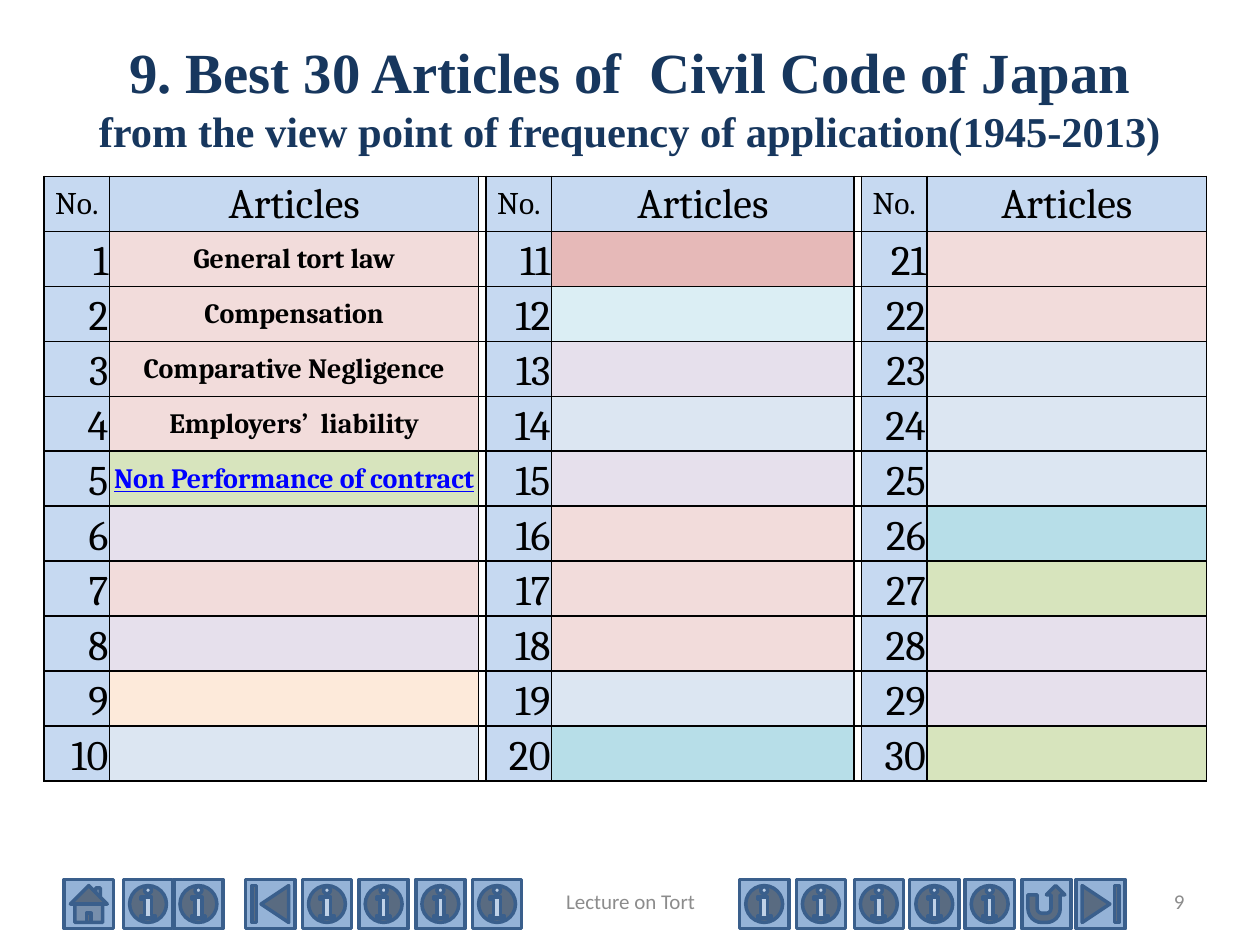
from dataclasses import dataclass

from lxml.etree import SubElement
from pptx import Presentation
from pptx.dml.color import RGBColor
from pptx.enum.shapes import MSO_SHAPE
from pptx.enum.text import MSO_ANCHOR, PP_ALIGN
from pptx.oxml.ns import qn
from pptx.util import Inches, Pt


@dataclass(frozen=True)
class Theme:
    title: str = "17375E"
    ink: str = "000000"
    link: str = "0000FF"
    footer: str = "8C8C8C"
    number: str = "C6D9F1"
    button: str = "95B3D7"
    button_line: str = "3A5F8C"
    title_font: str = "Times New Roman"
    table_font: str = "Cambria"
    footer_font: str = "Calibri"
    title_size: float = 32.4
    subtitle_size: float = 24.3
    large: int = 24
    label: int = 18
    article: int = 16
    small: int = 12


THEME = Theme()

# Fill of each kind of article
FILLS = {
    "rose": "F2DCDB", "deep rose": "E6B9B8", "aqua": "DBEEF4",
    "deep aqua": "B7DEE8", "purple": "E6E0EC", "blue": "DCE6F2",
    "green": "D7E4BD", "orange": "FDEADA",
}
# One list per block of ten articles
ARTICLE_KINDS = [
    ["rose"] * 4 + ["green", "purple", "rose", "purple", "orange", "blue"],
    ["deep rose", "aqua", "purple", "blue", "purple"] + ["rose"] * 3
    + ["blue", "deep aqua"],
    ["rose"] * 2 + ["blue"] * 3
    + ["deep aqua", "green", "purple", "purple", "green"],
]
ARTICLES = ["General tort law", "Compensation", "Comparative Negligence",
            "Employers’  liability", "Non Performance of contract"]
LINKED_ARTICLE = 5

COLUMN_WIDTHS = [0.52, 2.93, 0.05, 0.52, 2.4, 0.05, 0.52, 2.22]
BLOCK_STRIDE = 3
ROW_COUNT = 11
TABLE_HEIGHT = 4.8

BUTTON_TOP, BUTTON_SIZE = 6.98, 0.39
BUTTONS = {
    MSO_SHAPE.ACTION_BUTTON_HOME: [0.51],
    MSO_SHAPE.ACTION_BUTTON_BEGINNING: [1.95],
    MSO_SHAPE.ACTION_BUTTON_INFORMATION: [
        0.98, 1.38, 2.4, 2.85, 3.3, 3.75, 5.87, 6.32, 6.78, 7.22, 7.66],
    MSO_SHAPE.ACTION_BUTTON_RETURN: [8.11],
    MSO_SHAPE.ACTION_BUTTON_END: [8.54],
}


def paint(fill, color):
    fill.solid()
    fill.fore_color.rgb = RGBColor.from_string(color)


def write(paragraph, text, color, align, **font_format):
    """Add a run; font_format holds font attributes such as name and size."""
    paragraph.alignment = align
    run = paragraph.add_run()
    run.text = text
    for attribute, value in font_format.items():
        setattr(run.font, attribute, value)
    run.font.color.rgb = RGBColor.from_string(color)


def add_text_area(slide, left, top, width, height):
    area = slide.shapes.add_textbox(
        Inches(left), Inches(top), Inches(width), Inches(height))
    frame = area.text_frame
    frame.word_wrap = True
    frame.vertical_anchor = MSO_ANCHOR.MIDDLE
    return frame.paragraphs[0]


def add_title(slide):
    heading = add_text_area(slide, 0.5, 0.3, 9, 0.93)
    style = {"name": THEME.title_font, "bold": True}
    write(heading, "9. Best 30 Articles of  Civil Code of Japan", THEME.title,
          PP_ALIGN.CENTER, size=Pt(THEME.title_size), **style)
    heading.add_line_break()
    write(heading, "from the view point of frequency of application(1945-2013)",
          THEME.title, PP_ALIGN.CENTER, size=Pt(THEME.subtitle_size), **style)


def add_footer(slide, text, left, width, align):
    footer = add_text_area(slide, left, 6.95, width, 0.4)
    write(footer, text, THEME.footer, align,
          name=THEME.footer_font, size=Pt(THEME.small))


def add_buttons(slide):
    for kind, lefts in BUTTONS.items():
        for left in lefts:
            button = slide.shapes.add_shape(
                kind, Inches(left), Inches(BUTTON_TOP),
                Inches(BUTTON_SIZE), Inches(BUTTON_SIZE))
            button.shadow.inherit = False
            paint(button.fill, THEME.button)
            paint(button.line.fill, THEME.button_line)
            button.line.width = Pt(2)


def format_cell(cell):
    cell_format = {"margin_left": Inches(0.01), "margin_right": Inches(0.01),
                   "margin_top": Inches(0.01), "margin_bottom": 0,
                   "vertical_anchor": MSO_ANCHOR.MIDDLE}
    for attribute, value in cell_format.items():
        setattr(cell, attribute, value)
    # Borders come before the fill in the cell properties
    properties = cell._tc.get_or_add_tcPr()
    for side in ("a:lnL", "a:lnR", "a:lnT", "a:lnB"):
        border = SubElement(properties, qn(side), w=str(Pt(1)))
        solid = SubElement(border, qn("a:solidFill"))
        SubElement(solid, qn("a:srgbClr"), val=THEME.ink)
    cell.fill.background()


def fill_cell(cell, color, text="", size=THEME.large, ink=THEME.ink,
              align=PP_ALIGN.CENTER, **font_format):
    paint(cell.fill, color)
    if text:
        write(cell.text_frame.paragraphs[0], text, ink, align,
              name=THEME.table_font, size=Pt(size), **font_format)


def add_article_table(slide):
    table = slide.shapes.add_table(
        ROW_COUNT, len(COLUMN_WIDTHS), Inches(0.35), Inches(1.4),
        Inches(sum(COLUMN_WIDTHS)), Inches(TABLE_HEIGHT)).table
    table.first_row = table.horz_banding = False
    for column, width in zip(table.columns, COLUMN_WIDTHS):
        column.width = Inches(width)
    for cell in table.iter_cells():
        format_cell(cell)

    for block, kinds in enumerate(ARTICLE_KINDS):
        column = block * BLOCK_STRIDE
        # Header
        fill_cell(table.cell(0, column), THEME.number, "No.", THEME.label)
        fill_cell(table.cell(0, column + 1), THEME.number, "Articles")
        # Numbered articles
        for row, kind in enumerate(kinds, start=1):
            number = block * len(kinds) + row
            number_cell = table.cell(row, column)
            fill_cell(number_cell, THEME.number, str(number),
                      align=PP_ALIGN.RIGHT)
            number_cell.vertical_anchor = MSO_ANCHOR.BOTTOM
            linked = number == LINKED_ARTICLE
            name = ARTICLES[number - 1] if number <= len(ARTICLES) else ""
            fill_cell(table.cell(row, column + 1), FILLS[kind], name,
                      THEME.article, THEME.link if linked else THEME.ink,
                      bold=True, underline=linked)


def main():
    presentation = Presentation()
    presentation.slide_width = Inches(10)
    presentation.slide_height = Inches(7.5)
    slide = presentation.slides.add_slide(presentation.slide_layouts[6])
    add_buttons(slide)
    add_title(slide)
    add_article_table(slide)
    add_footer(slide, "Lecture on Tort", 3.42, 3.17, PP_ALIGN.CENTER)
    add_footer(slide, "9", 7.17, 2.33, PP_ALIGN.RIGHT)
    presentation.save("out.pptx")


if __name__ == "__main__":
    main()
